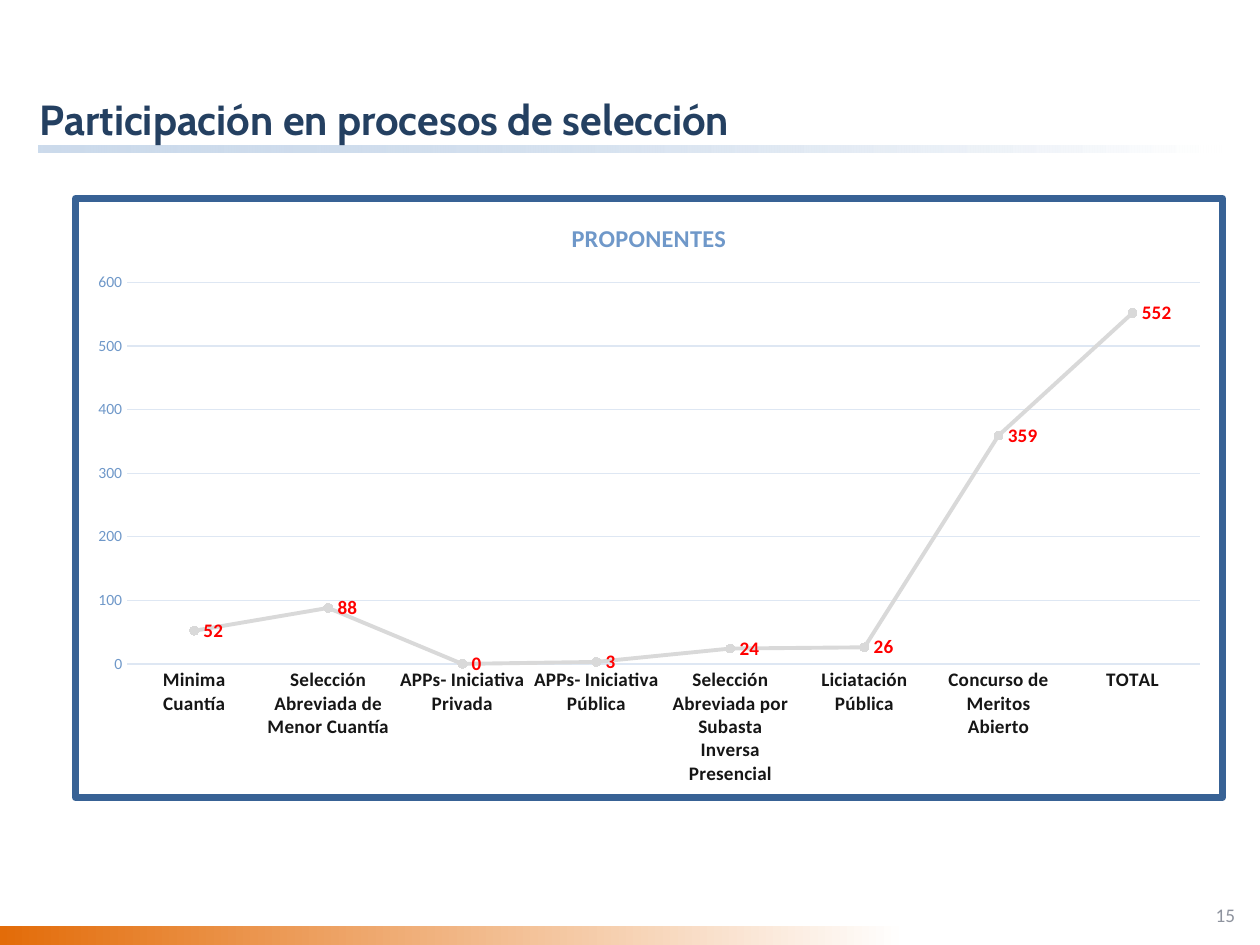
from dataclasses import dataclass

from lxml.etree import SubElement
from pptx import Presentation
from pptx.chart.data import CategoryChartData
from pptx.dml.color import RGBColor
from pptx.enum.chart import XL_CHART_TYPE, XL_LABEL_POSITION, XL_MARKER_STYLE, XL_TICK_MARK
from pptx.enum.shapes import MSO_SHAPE
from pptx.enum.text import MSO_ANCHOR, PP_ALIGN
from pptx.oxml import parse_xml
from pptx.oxml.ns import nsdecls, qn
from pptx.util import Emu, Pt


@dataclass(frozen=True)
class Theme:
    """Colours, fonts and type sizes of the slide."""
    navy: str = "244061"
    frame: str = "386295"
    sky: str = "6F98C9"
    rule: str = "9AB7D9"
    orange: str = "E36C09"
    grid: str = "DEE7F3"
    series: str = "D9D9D9"
    red: str = "FF0000"
    ink: str = "161616"
    gray: str = "8E939E"
    white: str = "FFFFFF"
    heading: str = "Cabin"
    body: str = "Calibri"
    title_size: int = 24
    chart_title_size: int = 14
    label_size: int = 11
    value_size: int = 9


T = Theme()
PROPONENTS = {
    "Minima Cuantía": 52,
    "Selección Abreviada de Menor Cuantía": 88,
    "APPs- Iniciativa Privada": 0,
    "APPs- Iniciativa Pública": 3,
    "Selección Abreviada por Subasta Inversa Presencial": 24,
    "Liciatación Pública": 26,
    "Concurso de Meritos Abierto": 359,
    "TOTAL": 552,
}


def px(n):
    """Turn pixels into EMU at 126 pixels to the inch."""
    return Emu(n * 914400 // 126)


def set_font(font, size, color, bold=False, name=T.body):
    """Format a font."""
    font.size, font.bold, font.name = Pt(size), bold, name
    font.color.rgb = RGBColor.from_string(color)


def add_text(s, text, box, *, size, color, bold=False, name=T.body,
             align=PP_ALIGN.LEFT, anchor=MSO_ANCHOR.MIDDLE):
    """Add a text box without insets."""
    tf = s.shapes.add_textbox(*map(px, box)).text_frame
    tf.word_wrap = True
    tf.vertical_anchor = anchor
    tf.margin_left = tf.margin_right = tf.margin_top = tf.margin_bottom = 0
    p = tf.paragraphs[0]
    p.alignment = align
    r = p.add_run()
    r.text = text
    set_font(r.font, size, color, bold, name)


def add_fading_bar(s, box, color, opacity=100):
    """Add a bar that fades to white from left to right."""
    sp = s.shapes.add_shape(MSO_SHAPE.RECTANGLE, *map(px, box))
    sp.shadow.inherit = False
    sp.line.fill.background()
    sp.fill.gradient()
    sp.fill.gradient_angle = 0
    for stop, shade in zip(sp.fill.gradient_stops, (color, T.white)):
        stop.color.rgb = RGBColor.from_string(shade)
    if opacity < 100:
        start = next(sp.element.iter(qn("a:srgbClr")))
        SubElement(start, qn("a:alpha"), val=str(opacity * 1000))


def frame_chart(chart):
    """Give the chart area a white fill and a thick border."""
    chart.element.find(qn("c:chart")).addnext(parse_xml(
        f'<c:spPr {nsdecls("c", "a")}>'
        f'<a:solidFill><a:srgbClr val="{T.white}"/></a:solidFill>'
        f'<a:ln w="{Pt(4)}"><a:solidFill><a:srgbClr val="{T.frame}"/></a:solidFill>'
        '<a:round/></a:ln></c:spPr>'))


def style_line(line, color, width):
    """Set the colour and width of a line."""
    line.color.rgb = RGBColor.from_string(color)
    line.width = Pt(width)


def style_axes(chart):
    """Format both axes and the gridlines."""
    cat, val = chart.category_axis, chart.value_axis
    for axis in (cat, val):
        axis.major_tick_mark = axis.minor_tick_mark = XL_TICK_MARK.NONE
    set_font(cat.tick_labels.font, T.label_size, T.ink, True)
    style_line(cat.format.line, T.grid, 0.75)
    set_font(val.tick_labels.font, T.value_size, T.sky)
    val.tick_labels.number_format = "0"
    val.tick_labels.number_format_is_linked = False
    val.format.line.fill.background()
    style_line(val.major_gridlines.format.line, T.grid, 0.75)


def style_series(series):
    """Format the line, its markers and its value labels."""
    series.smooth = False
    style_line(series.format.line, T.series, 2.25)
    series.marker.style = XL_MARKER_STYLE.CIRCLE
    series.marker.size = 5
    series.marker.format.fill.solid()
    series.marker.format.fill.fore_color.rgb = RGBColor.from_string(T.series)
    series.marker.format.line.fill.background()
    labels = series.data_labels
    labels.show_value = True
    labels.position = XL_LABEL_POSITION.RIGHT
    labels.number_format = "0"
    labels.number_format_is_linked = False
    set_font(labels.font, T.label_size, T.red, True)


def add_line_chart(s, title, values, box):
    """Add the framed line chart."""
    data = CategoryChartData(number_format="0")
    data.categories = list(values)
    data.add_series("Series 1", list(values.values()))
    chart = s.shapes.add_chart(XL_CHART_TYPE.LINE_MARKERS_STACKED, *map(px, box), data).chart
    set_font(chart.font, 10, T.frame)
    chart.has_legend = False
    chart.has_title = True
    p = chart.chart_title.text_frame.paragraphs[0]
    r = p.add_run()
    r.text = title
    set_font(r.font, T.chart_title_size, T.sky, True)
    chart.plots[0].vary_by_categories = False
    style_axes(chart)
    style_series(chart.plots[0].series[0])
    frame_chart(chart)


def main():
    """Build the slide and save it."""
    prs = Presentation()
    prs.slide_width, prs.slide_height = px(1260), px(945)
    s = prs.slides.add_slide(prs.slide_layouts[6])
    add_fading_bar(s, (39, 146, 1183, 7), T.rule, opacity=50)
    add_fading_bar(s, (0, 926, 906, 19), T.orange)
    add_text(s, "15", (1196, 890, 59, 50), size=T.label_size, color=T.gray,
             align=PP_ALIGN.CENTER)
    add_text(s, "Participación en procesos de selección", (40, 93, 1184, 51),
             size=T.title_size, color=T.navy, bold=True, name=T.heading,
             anchor=MSO_ANCHOR.BOTTOM)
    add_line_chart(s, "PROPONENTES", PROPONENTS, (72, 195, 1154, 606))
    prs.save("out.pptx")


if __name__ == "__main__":
    main()
